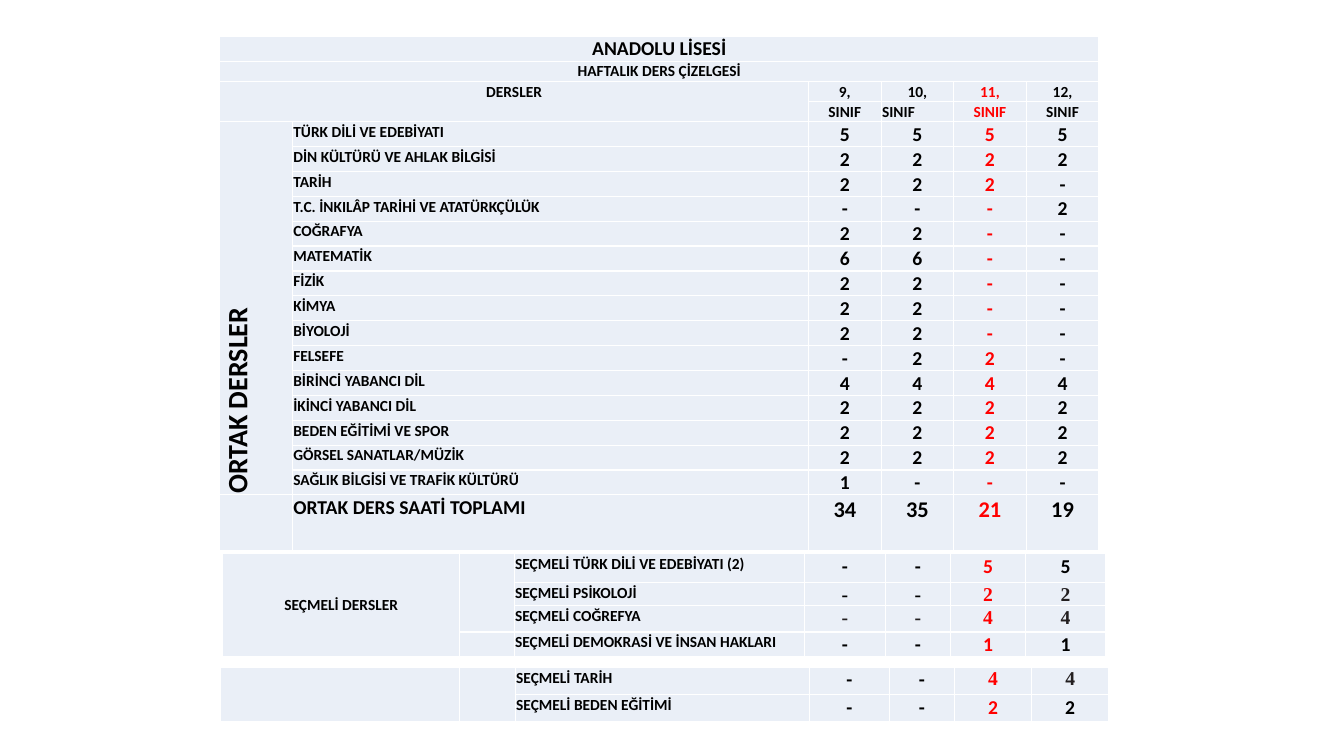
from dataclasses import dataclass

from lxml.etree import SubElement
from pptx import Presentation
from pptx.dml.color import RGBColor
from pptx.enum.text import MSO_ANCHOR as Anchor, PP_ALIGN as Align
from pptx.oxml.ns import qn
from pptx.slide import Slide
from pptx.table import Table, _Cell as Cell
from pptx.util import Inches, Pt

BLACK = RGBColor(0x00, 0x00, 0x00)
RED = RGBColor(0xFF, 0x00, 0x00)
CHARCOAL = RGBColor(0x23, 0x1F, 0x20)
PALE_BLUE = RGBColor(0xEA, 0xEF, 0xF7)
WHITE = RGBColor(0xFF, 0xFF, 0xFF)
SANS, SERIF = "Calibri", "Times New Roman"
GRADES = 4
RED_GRADE = 2


@dataclass
class Course:
    name: str
    hours: str
    name_size: int = 11
    hours_size: int = 14
    serif_from: int = GRADES
    charcoal_from: int = GRADES


@dataclass
class Grid:
    left: float
    top: float
    columns: list[float]
    rows: list[float]
    merges: list[tuple[int, int, int, int]]


COMMON_COURSES = [
    Course("TÜRK DİLİ VE EDEBİYATI", "5 5 5 5"),
    Course("DİN KÜLTÜRÜ VE AHLAK BİLGİSİ", "2 2 2 2"),
    Course("TARİH", "2 2 2 -"),
    Course("T.C. İNKILÂP TARİHİ VE ATATÜRKÇÜLÜK", "- - - 2"),
    Course("COĞRAFYA", "2 2 - -"),
    Course("MATEMATİK", "6 6 - -"),
    Course("FİZİK", "2 2 - -"),
    Course("KİMYA", "2 2 - -"),
    Course("BİYOLOJİ", "2 2 - -"),
    Course("FELSEFE", "- 2 2 -"),
    Course("BİRİNCİ YABANCI DİL", "4 4 4 4"),
    Course("İKİNCİ YABANCI DİL", "2 2 2 2"),
    Course("BEDEN EĞİTİMİ VE SPOR", "2 2 2 2"),
    Course("GÖRSEL SANATLAR/MÜZİK", "2 2 2 2"),
    Course("SAĞLIK BİLGİSİ VE TRAFİK KÜLTÜRÜ", "1 - - -"),
    Course("ORTAK DERS SAATİ TOPLAMI", "34 35 21 19", 14, 16),
]
ELECTIVES = [
    Course("SEÇMELİ TÜRK DİLİ VE EDEBİYATI (2)", "- - 5 5"),
    Course("SEÇMELİ PSİKOLOJİ", "- - 2 2", serif_from=0, charcoal_from=3),
    Course("SEÇMELİ COĞREFYA", "- - 4 4", serif_from=0, charcoal_from=0),
    Course("SEÇMELİ DEMOKRASİ VE İNSAN HAKLARI", "- - 1 1"),
]
MORE_ELECTIVES = [
    Course("SEÇMELİ TARİH", "- - 4 4", serif_from=2, charcoal_from=3),
    Course("SEÇMELİ BEDEN EĞİTİMİ", "- - 2 2"),
]
COMMON_GRID = Grid(
    2.18, 0.36, [0.72, 5.12] + [0.72] * GRADES,
    [0.24] + [0.2] * 3 + [0.24] * 15 + [0.55],
    [(0, 0, 0, 5), (1, 0, 1, 5), (2, 0, 3, 1), (4, 0, 18, 0)],
)
ELECTIVE_GRID = Grid(
    2.21, 5.49, [2.35, 0.54, 2.88, 0.8, 0.65, 0.74, 0.8],
    [0.29, 0.23, 0.26, 0.24], [(0, 0, 3, 0), (0, 1, 2, 1)],
)
MORE_GRID = Grid(
    2.19, 6.62, [2.37, 0.55, 2.92, 0.79, 0.65, 0.76, 0.77],
    [0.27, 0.27], [(0, 0, 1, 0), (0, 1, 1, 1)],
)


def style_cell(cell: Cell) -> None:
    properties = cell._tc.get_or_add_tcPr()
    for side in ("lnL", "lnR", "lnT", "lnB"):
        line = SubElement(properties, qn(f"a:{side}"), w=str(Pt(1)))
        SubElement(SubElement(line, qn("a:solidFill")), qn("a:srgbClr"), val=str(WHITE))
    cell.fill.solid()
    cell.fill.fore_color.rgb = PALE_BLUE
    cell.margin_left = cell.margin_right = cell.margin_top = Inches(0.01)
    cell.margin_bottom = 0
    SubElement(cell.text_frame.paragraphs[0]._p, qn("a:endParaRPr"), sz="1100")


def write_cell(cell: Cell, text: str, size: int, align: Align = Align.CENTER,
               color: RGBColor = BLACK, face: str = SANS) -> None:
    paragraph = cell.text_frame.paragraphs[0]
    paragraph.add_run().text = text
    paragraph.alignment = align
    font = paragraph.font
    font.size, font.bold, font.name = Pt(size), True, face
    font.color.rgb = color


def add_grid(slide: Slide, grid: Grid) -> Table:
    frame = slide.shapes.add_table(
        len(grid.rows), len(grid.columns), Inches(grid.left), Inches(grid.top),
        Inches(sum(grid.columns)), Inches(sum(grid.rows)))
    table = frame.table
    table.first_row = table.horz_banding = False
    for column, width in zip(table.columns, grid.columns):
        column.width = Inches(width)
    for row, height in zip(table.rows, grid.rows):
        row.height = Inches(height)
    for cell in table.iter_cells():
        style_cell(cell)
    for top, left, bottom, right in grid.merges:
        table.cell(top, left).merge(table.cell(bottom, right))
    return table


def write_courses(table: Table, courses: list[Course], first_row: int = 0) -> None:
    first_grade = len(table.columns) - GRADES
    for row, course in enumerate(courses, first_row):
        write_cell(table.cell(row, first_grade - 1), course.name, course.name_size, Align.LEFT)
        for grade, hours in enumerate(course.hours.split()):
            color = CHARCOAL if grade >= course.charcoal_from else BLACK
            write_cell(table.cell(row, first_grade + grade), hours, course.hours_size,
                       color=RED if grade == RED_GRADE else color,
                       face=SERIF if grade >= course.serif_from else SANS)


def write_headings(table: Table) -> None:
    write_cell(table.cell(0, 0), "ANADOLU LİSESİ", 14)
    write_cell(table.cell(1, 0), "HAFTALIK DERS ÇİZELGESİ", 11)
    write_cell(table.cell(2, 0), "DERSLER", 11)
    for grade in range(GRADES):
        color = RED if grade == RED_GRADE else BLACK
        align = Align.LEFT if grade == 1 else Align.CENTER
        write_cell(table.cell(2, 2 + grade), f"{9 + grade},", 11, color=color)
        write_cell(table.cell(3, 2 + grade), "SINIF", 11, align, color)
    group = table.cell(4, 0)
    write_cell(group, "ORTAK DERSLER", 20, Align.LEFT)
    group.vertical_anchor = Anchor.BOTTOM
    group._tc.get_or_add_tcPr().set("vert", "vert270")


def main() -> None:
    """Build the weekly course timetable slide."""
    presentation = Presentation()
    presentation.slide_width, presentation.slide_height = Inches(13.33), Inches(7.5)
    slide = presentation.slides.add_slide(presentation.slide_layouts[6])

    common = add_grid(slide, COMMON_GRID)
    write_headings(common)
    write_courses(common, COMMON_COURSES, first_row=4)

    electives = add_grid(slide, ELECTIVE_GRID)
    write_cell(electives.cell(0, 0), "SEÇMELİ DERSLER", 11)
    electives.cell(0, 0).vertical_anchor = Anchor.MIDDLE
    write_courses(electives, ELECTIVES)

    write_courses(add_grid(slide, MORE_GRID), MORE_ELECTIVES)
    presentation.save("out.pptx")


if __name__ == "__main__":
    main()
